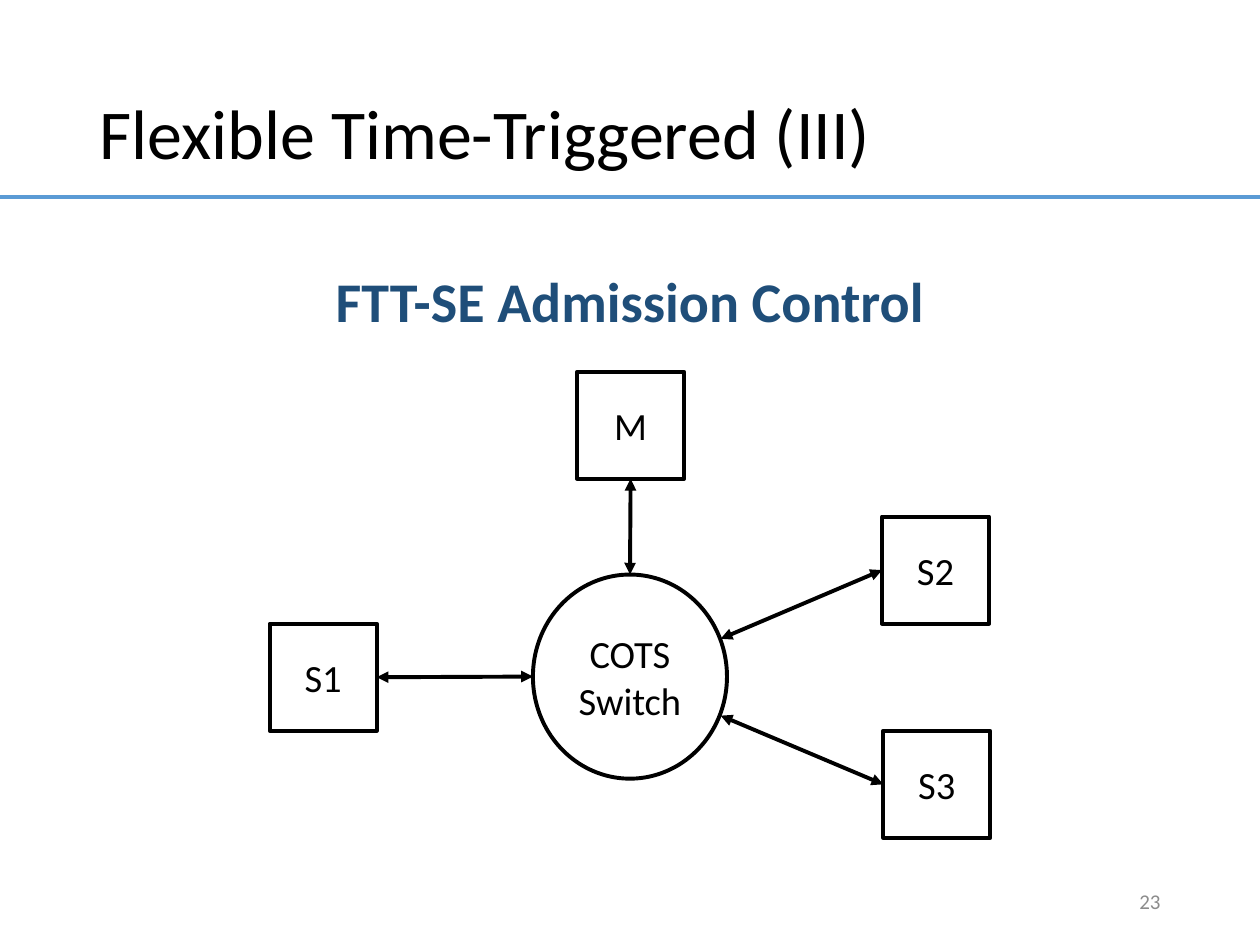
import dataclasses

import lxml.etree
import pptx
import pptx.dml.color
import pptx.enum.shapes
import pptx.enum.text
import pptx.oxml
import pptx.oxml.ns
import pptx.util

Inches = pptx.util.Inches
Pt = pptx.util.Pt
ALIGN = pptx.enum.text.PP_ALIGN
SHAPE = pptx.enum.shapes.MSO_SHAPE

COLORS = {
    "text": "000000",
    "rule": "5B9BD5",
    "heading": "1F4E79",
    "number": "8C8C8C",
}
NODE_SIZE = 0.85
LINE_WIDTH = 2.25


@dataclasses.dataclass(frozen=True)
class Node:
    label: str
    left: float
    top: float
    side: int
    switch_x: float
    switch_y: float


NODES = [
    Node("S1", 2.14, 4.95, 3, 4.23, 5.37),
    Node("S2", 7.0, 4.1, 1, 5.72, 5.07),
    Node("S3", 7.01, 5.8, 1, 5.72, 5.68),
    Node("M", 4.58, 2.95, 2, 5.0, 4.56),
]


def rgb(name: str) -> pptx.dml.color.RGBColor:
    return pptx.dml.color.RGBColor.from_string(COLORS[name])


def write(sp, lines: list[str], size: float, color: str = "text",
          bold: bool = False, **paragraph_format) -> None:
    tf = sp.text_frame
    frame_format = {
        "word_wrap": True,
        "auto_size": pptx.enum.text.MSO_AUTO_SIZE.NONE,
        "vertical_anchor": pptx.enum.text.MSO_ANCHOR.MIDDLE,
    }
    for key, value in frame_format.items():
        setattr(tf, key, value)
    font_format = {"name": "Calibri", "size": Pt(size), "bold": bold}
    for i, line in enumerate(lines):
        p = tf.paragraphs[0] if i == 0 else tf.add_paragraph()
        for key, value in paragraph_format.items():
            setattr(p, key, value)
        r = p.add_run()
        r.text = line
        for key, value in font_format.items():
            setattr(r.font, key, value)
        r.font.color.rgb = rgb(color)


def add_text(slide, box: tuple[float, ...], text: str, size: float,
             **text_format) -> None:
    sp = slide.shapes.add_textbox(*map(Inches, box))
    write(sp, [text], size, **text_format)


def add_outline(slide, kind, box: tuple[float, ...], lines: list[str]):
    sp = slide.shapes.add_shape(kind, *map(Inches, box))
    sp.shadow.inherit = False
    sp.fill.background()
    sp.line.color.rgb = rgb("text")
    sp.line.width = Pt(LINE_WIDTH)
    for margin in ("margin_left", "margin_right", "margin_top", "margin_bottom"):
        setattr(sp.text_frame, margin, 0)
    write(sp, lines, 22, alignment=ALIGN.CENTER)
    return sp


def add_line(slide, points: tuple[float, ...], color: str, arrows: bool = False):
    line = slide.shapes.add_connector(
        pptx.enum.shapes.MSO_CONNECTOR.STRAIGHT, *map(Inches, points))
    line.line.color.rgb = rgb(color)
    line.line.width = Pt(LINE_WIDTH)
    qn = pptx.oxml.ns.qn
    if arrows:
        ln = line.line._get_or_add_ln()
        for tag in ("a:headEnd", "a:tailEnd"):
            lxml.etree.SubElement(ln, qn(tag), type="triangle")
    lxml.etree.SubElement(line._element.spPr, qn("a:effectLst"))
    return line


def add_node(slide, node: Node) -> None:
    box = (node.left, node.top, NODE_SIZE, NODE_SIZE)
    sp = add_outline(slide, SHAPE.RECTANGLE, box, [node.label])
    end = (node.switch_x, node.switch_y)
    link = add_line(slide, end + end, "text", arrows=True)
    link.begin_connect(sp, node.side)


def main() -> None:
    prs = pptx.Presentation()
    prs.slide_width, prs.slide_height = Inches(10), Inches(7.5)
    slide = prs.slides.add_slide(prs.slide_layouts[5])

    add_line(slide, (0, 1.56, 10, 1.56), "rule")
    title = slide.shapes.title
    place = {"left": 0.69, "top": 0.33, "width": 8.62, "height": 1.51}
    for key, value in place.items():
        setattr(title, key, Inches(value))
    write(title, ["Flexible Time-Triggered (III)"], 40,
          alignment=ALIGN.LEFT, line_spacing=0.9)
    add_text(slide, (7.06, 6.95, 2.25, 0.4), "23", 12,
             color="number", alignment=ALIGN.RIGHT)
    add_text(slide, (1.89, 2.11, 6.22, 0.61), "FTT-SE Admission Control", 32,
             color="heading", bold=True, alignment=ALIGN.CENTER,
             line_spacing=0.9, space_before=Pt(10))

    add_outline(slide, SHAPE.OVAL, (4.23, 4.56, 1.54, 1.62), ["COTS", "Switch"])
    for node in NODES:
        add_node(slide, node)

    prs.save("out.pptx")


if __name__ == "__main__":
    main()
